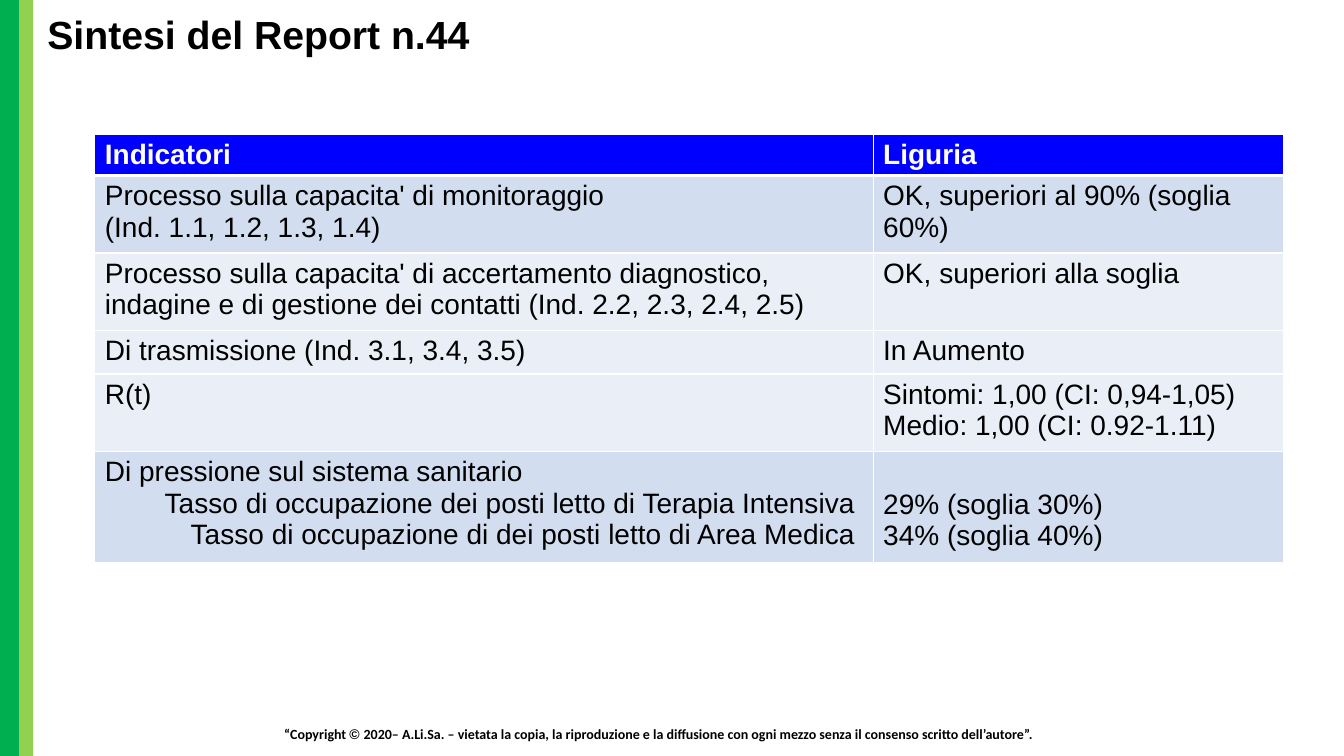
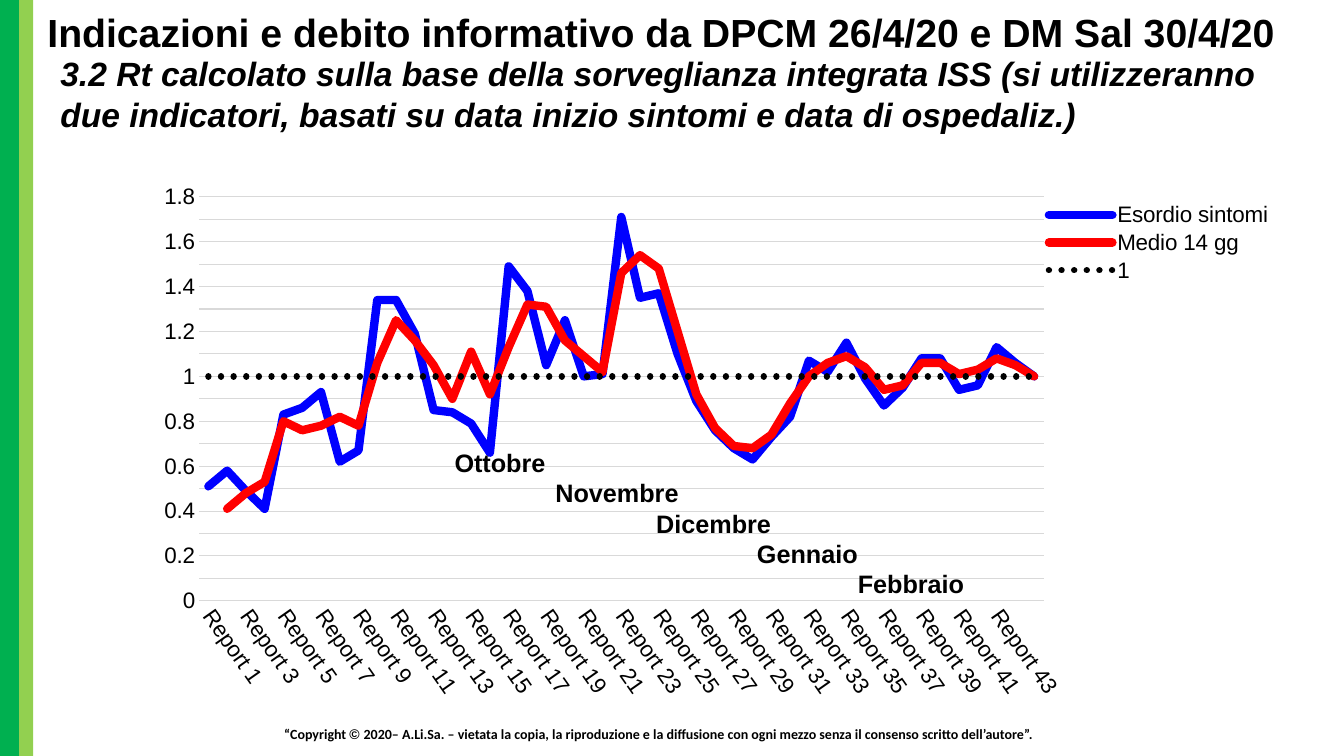
from pptx import Presentation
from pptx.chart.data import CategoryChartData
from pptx.dml.color import RGBColor
from pptx.enum.chart import XL_CHART_TYPE, XL_LEGEND_POSITION, XL_TICK_MARK
from pptx.enum.dml import MSO_LINE
from pptx.enum.shapes import MSO_SHAPE
from pptx.enum.text import MSO_ANCHOR, PP_ALIGN
from pptx.oxml.ns import qn
from pptx.oxml.xmlchemy import OxmlElement
from pptx.util import Inches, Pt

BLACK, WHITE, BLUE, RED, GRID = "000000", "FFFFFF", "0000FF", "FF0000", "D9D9D9"
SHADE, PALE = "D2DEEF", "EAEFF7"
BANDS = [(0, 0.19, "00B050"), (0.19, 0.14, "92D050")]
FOOTER = [
    ("“Copyright ", "Calibri"),
    ("© ", "Arial"),
    ("2020– A.Li.Sa. – vietata la copia, la riproduzione e la diffusione con ogni mezzo "
     "senza il consenso scritto dell’autore”.", "Calibri"),
]

REPORT_TITLE = "Sintesi del Report n.44"
COLUMN_WIDTHS = [7.72, 4.07]
TABLE_ROWS = [
    (0.41, BLUE, ["Indicatori"], ["Liguria"]),
    (0.77, SHADE, ["Processo sulla capacita' di monitoraggio", "(Ind. 1.1, 1.2, 1.3, 1.4)"],
     ["OK, superiori al 90% (soglia 60%)"]),
    (0.77, PALE, ["Processo sulla capacita' di accertamento diagnostico, indagine e di gestione "
                  "dei contatti (Ind. 2.2, 2.3, 2.4, 2.5)"],
     ["OK, superiori alla soglia"]),
    (0.43, PALE, ["Di trasmissione (Ind. 3.1, 3.4, 3.5)"], ["In Aumento"]),
    (0.77, PALE, ["R(t)"], ["Sintomi: 1,00 (CI: 0,94-1,05)", "Medio: 1,00 (CI: 0.92-1.11)"]),
    (1.1, SHADE, ["Di pressione sul sistema sanitario",
                  "Tasso di occupazione dei posti letto di Terapia Intensiva ",
                  "Tasso di occupazione di dei posti letto di Area Medica "],
     ["29% (soglia 30%)", "34% (soglia 40%)"]),
]

RT_TITLE = "Indicazioni e debito informativo da DPCM 26/4/20 e DM Sal 30/4/20"
RT_SUBTITLE = ("3.2 Rt calcolato sulla base della sorveglianza integrata ISS (si utilizzeranno "
               "due indicatori, basati su data inizio sintomi e data di ospedaliz.)")
MONTHS = ["Ottobre", "Novembre", "Dicembre", "Gennaio", "Febbraio"]
SYMPTOMS = [
    0.51, 0.58, 0.49, 0.41, 0.83, 0.86, 0.93, 0.62, 0.67, 1.34, 1.34, 1.19, 0.85, 0.84, 0.79,
    0.66, 1.49, 1.38, 1.05, 1.25, 1, 1.01, 1.71, 1.35, 1.37, 1.1, 0.89, 0.76, 0.68, 0.63,
    0.73, 0.82, 1.07, 1.02, 1.15, 0.99, 0.87, 0.95, 1.08, 1.08, 0.94, 0.96, 1.13, 1.06, 1]
AVERAGE = [
    None, 0.41, 0.48, 0.53, 0.8, 0.76, 0.78, 0.82, 0.78, 1.06, 1.25, 1.16, 1.05, 0.9, 1.11,
    0.92, 1.13, 1.32, 1.31, 1.16, 1.09, 1.02, 1.46, 1.54, 1.48, 1.2, 0.92, 0.77, 0.69, 0.68,
    0.74, 0.88, 1, 1.06, 1.09, 1.04, 0.94, 0.96, 1.06, 1.06, 1.01, 1.03, 1.08, 1.05, 1]
REPORTS = [f"Report {n}" for n in range(1, len(SYMPTOMS))] + [""]
SERIES = [
    ("Esordio sintomi", SYMPTOMS, BLUE, 6, None),
    ("Medio 14 gg", AVERAGE, RED, 6, None),
    ("1", [1] * len(SYMPTOMS), BLACK, 4.5, MSO_LINE.ROUND_DOT),
]


def rgb(value):
    return RGBColor.from_string(value)


def box(*lengths):
    return [Inches(n) for n in lengths]


def style(font, size, color=BLACK, bold=False, italic=False, name="Arial"):
    font.size, font.bold, font.italic, font.name = Pt(size), bold, italic, name
    font.color.rgb = rgb(color)


def write(tf, lines, size, **look):
    for i, line in enumerate(lines):
        p = tf.paragraphs[0] if i == 0 else tf.add_paragraph()
        p.text = line
        style(p.runs[0].font, size, **look)


def add_text(slide, place, lines, size, **look):
    tf = slide.shapes.add_textbox(*box(*place)).text_frame
    tf.word_wrap = True
    write(tf, lines, size, **look)
    return tf


def decorate_layout(layout, slide):
    parts = []
    for left, width, color in BANDS:
        sp = slide.shapes.add_shape(MSO_SHAPE.RECTANGLE, *box(left, 0, width, 7.5))
        sp.shadow.inherit = False
        sp.fill.solid()
        sp.fill.fore_color.rgb = rgb(color)
        sp.line.fill.background()
        parts.append(sp)
    footer = slide.shapes.add_textbox(*box(2.72, 7.15, 7.9, 0.27))
    footer.text_frame.word_wrap = True
    p = footer.text_frame.paragraphs[0]
    for text, name in FOOTER:
        r = p.add_run()
        r.text = text
        style(r.font, 10, bold=True, name=name)
    for sp in parts + [footer]:
        layout.shapes.element.append(sp.element)


def set_title(slide, text, top, height):
    title = slide.shapes.title
    title.left, title.top, title.width, title.height = box(0.37, top, 13.18, height)
    tf = title.text_frame
    tf.vertical_anchor = MSO_ANCHOR.MIDDLE
    write(tf, [text], 28, bold=True)
    tf.paragraphs[0].alignment = PP_ALIGN.LEFT
    tf.paragraphs[0].line_spacing = 0.9


def set_borders(cell, bottom):
    tc_pr = cell._tc.get_or_add_tcPr()
    for i, (side, width) in enumerate([("L", 1), ("R", 1), ("T", 1), ("B", bottom)]):
        ln = OxmlElement(f"a:ln{side}")
        ln.set("w", str(Pt(width)))
        fill = OxmlElement("a:solidFill")
        color = OxmlElement("a:srgbClr")
        color.set("val", WHITE)
        fill.append(color)
        ln.append(fill)
        tc_pr.insert(i, ln)


def add_indicator_table(slide):
    total = sum(row[0] for row in TABLE_ROWS)
    table = slide.shapes.add_table(len(TABLE_ROWS), len(COLUMN_WIDTHS),
                                   *box(0.94, 1.33, sum(COLUMN_WIDTHS), total)).table
    table.horz_banding = False
    for column, width in zip(table.columns, COLUMN_WIDTHS):
        column.width = Inches(width)
    for i, (height, fill, *texts) in enumerate(TABLE_ROWS):
        header = i == 0
        table.rows[i].height = Inches(height)
        for cell, lines in zip(table.rows[i].cells, texts):
            cell.fill.solid()
            cell.fill.fore_color.rgb = rgb(fill)
            set_borders(cell, 3 if header else 1)
            write(cell.text_frame, lines, 20, color=WHITE if header else BLACK, bold=header)
    pressure, rates = table.rows[len(TABLE_ROWS) - 1].cells
    for p in pressure.text_frame.paragraphs[1:]:
        p.alignment = PP_ALIGN.RIGHT
    rates.margin_top = Inches(0.37)


def set_layout(parent, index, inner, **place):
    for old in parent.findall(qn("c:layout")):
        parent.remove(old)
    layout = OxmlElement("c:layout")
    manual = OxmlElement("c:manualLayout")
    values = {"xMode": "edge", "yMode": "edge", **place}
    if inner:
        values = {"layoutTarget": "inner", **values}
    for tag, value in values.items():
        item = OxmlElement(f"c:{tag}")
        item.set("val", str(value))
        manual.append(item)
    layout.append(manual)
    parent.insert(index, layout)


def add_rt_chart(slide):
    data = CategoryChartData()
    data.categories = REPORTS
    for name, values, *_ in SERIES:
        data.add_series(name, values)
    chart = slide.shapes.add_chart(XL_CHART_TYPE.LINE, *box(0.99, 1.67, 12.14, 6.14), data).chart
    style(chart.font, 10, name="Calibri")
    chart.has_title = False
    chart.plots[0].vary_by_categories = False
    for series, (_, _, color, width, dash) in zip(chart.plots[0].series, SERIES):
        series.smooth = False
        line = series.format.line
        line.color.rgb = rgb(color)
        line.width = Pt(width)
        if dash:
            line.dash_style = dash
        series.format.element.find(".//" + qn("a:ln")).set("cap", "rnd") if hasattr(
            series.format, "element") else line._get_or_add_ln().set("cap", "rnd")

    reports, rt = chart.category_axis, chart.value_axis
    for axis in (reports, rt):
        axis.major_tick_mark = axis.minor_tick_mark = XL_TICK_MARK.NONE
        style(axis.tick_labels.font, 16)
    rt.minimum_scale, rt.maximum_scale, rt.major_unit = 0, 1.8, 0.1
    rt.format.line.fill.background()
    for line in (reports.format.line, rt.major_gridlines.format.line):
        line.color.rgb = rgb(GRID)
        line.width = Pt(0.75)
    labels = chart.element.find(".//" + qn("c:catAx")).find(qn("c:txPr"))
    labels.find(qn("a:bodyPr")).set("rot", str(55 * 60000))

    chart.has_legend = True
    chart.legend.position = XL_LEGEND_POSITION.RIGHT
    chart.legend.include_in_layout = False
    style(chart.legend.font, 16)
    set_layout(chart.element.find(".//" + qn("c:legend")), 1, False,
               x=0.77, y=0.05, w=0.19, h=0.14)
    set_layout(chart.element.find(".//" + qn("c:plotArea")), 0, True,
               x=0.081, y=0.046, w=0.69, h=0.653)


def add_months(slide):
    tf = add_text(slide, (4.41, 4.39, 5.6, 1.62), MONTHS, 18, bold=True)
    for i, p in enumerate(tf.paragraphs):
        p._p.get_or_add_pPr().set("marL", str(Inches(i)))


def main():
    prs = Presentation()
    prs.slide_width, prs.slide_height = box(13.33, 7.5)
    layout = prs.slide_layouts[5]

    s = prs.slides.add_slide(layout)
    decorate_layout(layout, s)
    set_title(s, REPORT_TITLE, 0, 0.72)
    add_indicator_table(s)

    s = prs.slides.add_slide(layout)
    set_title(s, RT_TITLE, -0.25, 1.19)
    add_text(s, (0.5, 0.48, 12.36, 0.91), [RT_SUBTITLE], 24, bold=True, italic=True)
    add_rt_chart(s)
    add_months(s)

    prs.save("out.pptx")


if __name__ == "__main__":
    main()
